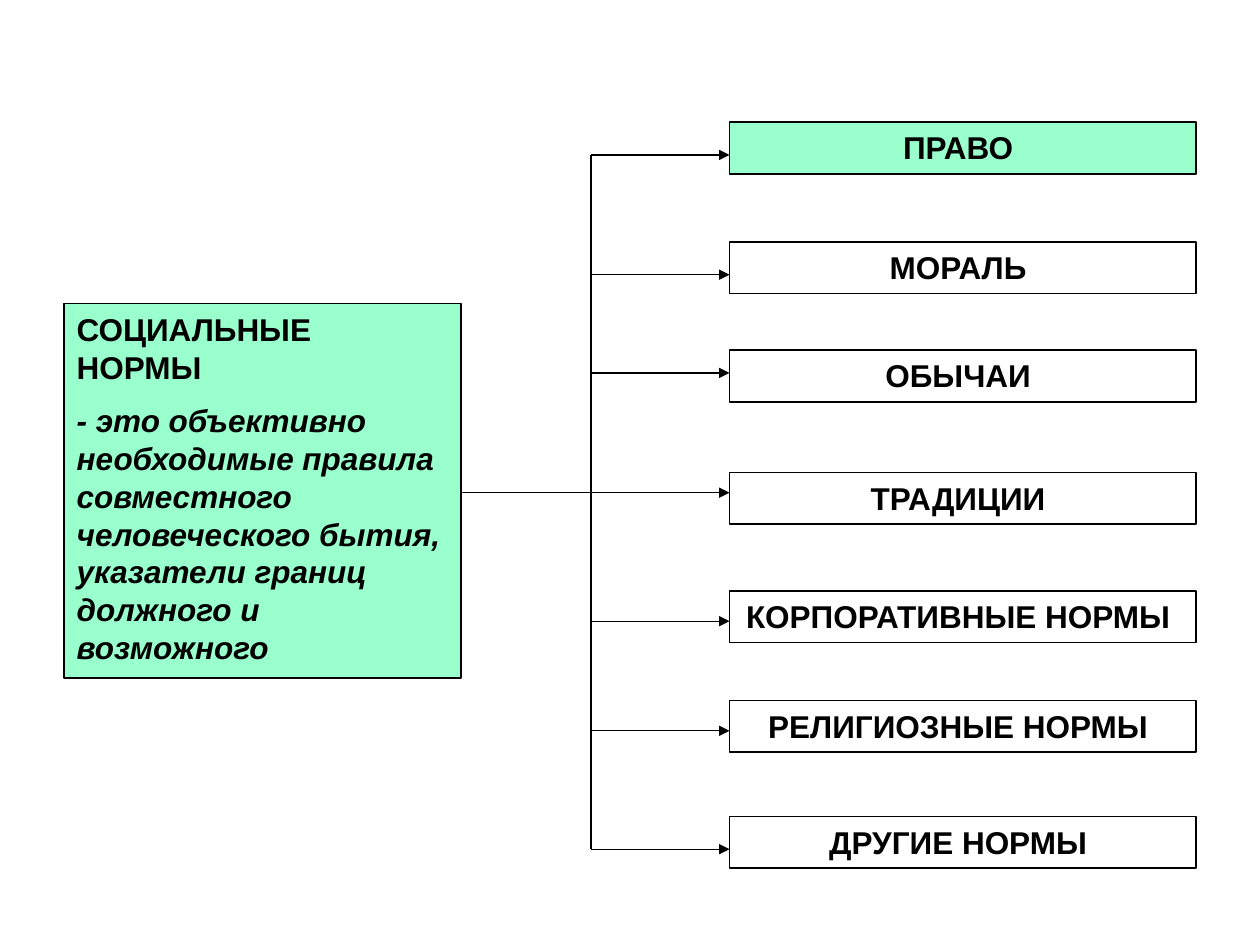
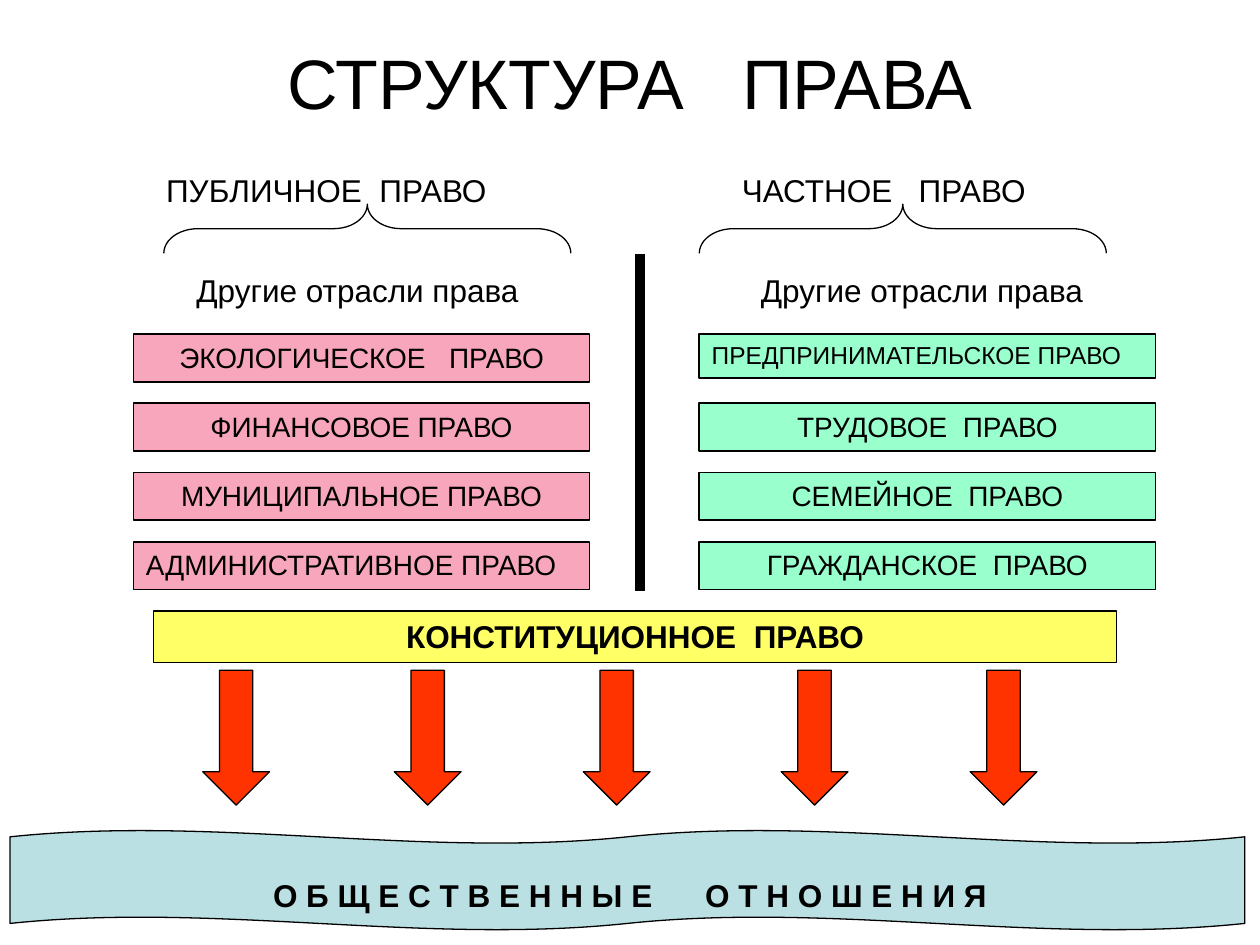
from lxml import etree
from pptx import Presentation
from pptx.dml.color import RGBColor
from pptx.enum.shapes import MSO_CONNECTOR, MSO_SHAPE
from pptx.enum.text import MSO_ANCHOR, PP_ALIGN
from pptx.oxml.ns import qn
from pptx.util import Inches, Pt

BLACK = RGBColor(0x00, 0x00, 0x00)
MINT = RGBColor(0x99, 0xFF, 0xCC)
PINK = RGBColor(0xF8, 0xA6, 0xBB)
YELLOW = RGBColor(0xFF, 0xFF, 0x66)
RED = RGBColor(0xFF, 0x33, 0x00)
PALE_BLUE = RGBColor(0xBB, 0xE0, 0xE3)
FONT = "Arial"
SPACE_WIDTH = 0.278

RECTANGLE = MSO_SHAPE.RECTANGLE
DOWN_ARROW = MSO_SHAPE.DOWN_ARROW
LEFT_BRACE = MSO_SHAPE.LEFT_BRACE
DOUBLE_WAVE = MSO_SHAPE.DOUBLE_WAVE
STRAIGHT = MSO_CONNECTOR.STRAIGHT
LEFT, CENTER = PP_ALIGN.LEFT, PP_ALIGN.CENTER
TOP, MIDDLE = MSO_ANCHOR.TOP, MSO_ANCHOR.MIDDLE

DEFINITION_TERM = ("СОЦИАЛЬНЫЕ", "НОРМЫ")
DEFINITION_TEXT = (
    "- это объективно необходимые правила совместного человеческого бытия, "
    "указатели границ должного и возможного"
)
NORMS = [
    {"name": "ПРАВО", "top": 0.97, "arrow_y": 1.23, "fill": MINT},
    {"name": "МОРАЛЬ", "top": 1.92, "arrow_y": 2.18},
    {"name": "ОБЫЧАИ", "top": 2.78, "arrow_y": 2.96},
    {"name": "ТРАДИЦИИ", "top": 3.75, "arrow_y": 3.91},
    {"name": "КОРПОРАТИВНЫЕ НОРМЫ", "top": 4.69, "arrow_y": 4.93},
    {"name": "РЕЛИГИОЗНЫЕ НОРМЫ", "top": 5.56, "arrow_y": 5.8},
    {"name": "ДРУГИЕ НОРМЫ", "top": 6.48, "arrow_y": 6.74},
]
DEFINITION_RIGHT, TRUNK_X, NORM_LEFT = 3.66, 4.69, 5.79
ROOT_NORM = "ТРАДИЦИИ"

TITLE = ("СТРУКТУРА", "ПРАВА")
OTHER_BRANCHES = "Другие отрасли права"
COLUMNS = [
    {
        "heading": ("ПУБЛИЧНОЕ", "ПРАВО"), "heading_gap": 1,
        "heading_left": 1.22, "brace_left": 2.72, "other_left": 1.46,
        "box_left": 1.06, "fill": PINK,
        "branches": [
            {"words": ("ЭКОЛОГИЧЕСКОЕ", "ПРАВО"), "gap": 2},
            {"words": ("ФИНАНСОВОЕ", "ПРАВО")},
            {"words": ("МУНИЦИПАЛЬНОЕ", "ПРАВО")},
            {"words": ("АДМИНИСТРАТИВНОЕ", "ПРАВО"), "align": LEFT},
        ],
    },
    {
        "heading": ("ЧАСТНОЕ", "ПРАВО"), "heading_gap": 2,
        "heading_left": 5.79, "brace_left": 6.97, "other_left": 5.94,
        "box_left": 5.55, "fill": MINT,
        "branches": [
            {"words": ("ПРЕДПРИНИМАТЕЛЬСКОЕ", "ПРАВО"), "align": LEFT,
             "size": 14, "height": 0.35},
            {"words": ("ТРУДОВОЕ", "ПРАВО"), "gap": 1},
            {"words": ("СЕМЕЙНОЕ", "ПРАВО"), "gap": 1},
            {"words": ("ГРАЖДАНСКОЕ", "ПРАВО"), "gap": 1},
        ],
    },
]
BRANCH_TOP, BRANCH_PITCH = 2.65, 0.55
FOUNDATION = ("КОНСТИТУЦИОННОЕ", "ПРАВО")
ARROW_LEFTS = [1.61, 3.13, 4.63, 6.2, 7.7]
RELATIONS = ("О Б Щ Е С Т В Е Н Н Ы Е", "О Т Н О Ш Е Н И Я")


def format_paragraph(paragraph, size, align=LEFT, bold=False, italic=False):
    paragraph.alignment = align
    font = paragraph.font
    font.name, font.size = FONT, Pt(size)
    font.bold, font.italic = bold, italic
    font.color.rgb = BLACK


def write(shape, words, size=18, align=LEFT, bold=False, gap=0, anchor=TOP):
    frame = shape.text_frame
    frame.word_wrap = True
    frame.vertical_anchor = anchor
    paragraph = frame.paragraphs[0]
    format_paragraph(paragraph, size, align, bold)
    if not gap:
        paragraph.text = " ".join(words)
        return
    first, second = words
    for part in (first, " ", second):
        run = paragraph.add_run()
        run.text = part
        if part == " ":
            spacing = round(gap * size * SPACE_WIDTH * 100)
            run.font._element.set("spc", str(spacing))


def add_figure(slide, kind, box, fill=None, line=0.75, adjustments=()):
    shape = slide.shapes.add_shape(kind, *map(Inches, box))
    shape.shadow.inherit = False
    if fill is None:
        shape.fill.background()
    else:
        shape.fill.solid()
        shape.fill.fore_color.rgb = fill
    shape.line.color.rgb = BLACK
    shape.line.width = Pt(line)
    for index, value in enumerate(adjustments):
        shape.adjustments[index] = value
    return shape


def add_label(slide, box, words, **style):
    write(slide.shapes.add_textbox(*map(Inches, box)), words, **style)


def add_line(slide, start, end, width=0.75, arrow=False):
    connector = slide.shapes.add_connector(
        STRAIGHT, *map(Inches, (*start, *end)))
    connector.line.color.rgb = BLACK
    connector.line.width = Pt(width)
    properties = connector._element.spPr
    if arrow:
        outline = properties.find(qn("a:ln"))
        etree.SubElement(outline, qn("a:tailEnd"), type="triangle")
    etree.SubElement(properties, qn("a:effectLst"))


def build_definition(slide):
    definition = add_figure(
        slide, RECTANGLE, (0.51, 2.41, 3.15, 2.97), MINT, 1)
    frame = definition.text_frame
    first_word, second_word = DEFINITION_TERM
    write(definition, [first_word], bold=True)
    term = frame.paragraphs[0]
    term.add_line_break()
    term.add_run().text = second_word
    explanation = frame.add_paragraph()
    explanation.text = DEFINITION_TEXT
    format_paragraph(explanation, 18, bold=True, italic=True)
    explanation.space_before = Pt(9)


def build_norms(presentation):
    slide = presentation.slides.add_slide(presentation.slide_layouts[6])
    build_definition(slide)
    for norm in NORMS:
        box = add_figure(slide, RECTANGLE, (NORM_LEFT, norm["top"], 3.7, 0.41),
                         norm.get("fill"), 1)
        write(box, [norm["name"]], align=CENTER, bold=True)
        box.text_frame.margin_right = Inches(0.17)
        start_x = DEFINITION_RIGHT if norm["name"] == ROOT_NORM else TRUNK_X
        arrow_y = norm["arrow_y"]
        add_line(slide, (start_x, arrow_y), (NORM_LEFT, arrow_y), arrow=True)
    add_line(slide, (TRUNK_X, NORMS[0]["arrow_y"]),
             (TRUNK_X, NORMS[-1]["arrow_y"]))


def build_column(slide, column):
    brace = add_figure(slide, LEFT_BRACE, (column["brace_left"], 0.2, 0.39, 3.23),
                       adjustments=(0.69, 0.5))
    brace.rotation = 90
    add_label(slide, (column["heading_left"], 1.31, 2.91, 0.4),
              column["heading"], gap=column["heading_gap"])
    add_label(slide, (column["other_left"], 2.1, 2.91, 0.4), [OTHER_BRANCHES])
    for row, branch in enumerate(column["branches"]):
        box = (column["box_left"], BRANCH_TOP + row * BRANCH_PITCH,
               3.62, branch.get("height", 0.38))
        shape = add_figure(slide, RECTANGLE, box, column["fill"], 1)
        write(shape, branch["words"], branch.get("size", 16),
              branch.get("align", CENTER), gap=branch.get("gap", 0))


def build_structure(presentation):
    slide = presentation.slides.add_slide(presentation.slide_layouts[5])
    title = slide.shapes.title
    title.left, title.top, title.width, title.height = map(
        Inches, (0.5, 0.3, 9, 0.69))
    write(title, TITLE, 40, CENTER, gap=2, anchor=MIDDLE)

    add_figure(slide, DOUBLE_WAVE, (0.08, 6.59, 9.8, 0.79), PALE_BLUE,
               adjustments=(0.065, 0))
    add_label(slide, (0.67, 6.9, 8.66, 0.4), RELATIONS,
              align=CENTER, bold=True, gap=5)
    foundation = add_figure(slide, RECTANGLE, (1.22, 4.85, 7.64, 0.41), YELLOW)
    write(foundation, FOUNDATION, align=CENTER, bold=True, gap=1)
    for left in ARROW_LEFTS:
        add_figure(slide, DOWN_ARROW, (left, 5.32, 0.53, 1.07), RED,
                   adjustments=(0.5, 0.5))
    add_line(slide, (5.08, 2.02), (5.08, 4.69), width=6)
    for column in COLUMNS:
        build_column(slide, column)


def main():
    presentation = Presentation()
    presentation.slide_width = Inches(10)
    presentation.slide_height = Inches(7.5)
    build_norms(presentation)
    build_structure(presentation)
    presentation.save("out.pptx")


if __name__ == "__main__":
    main()
